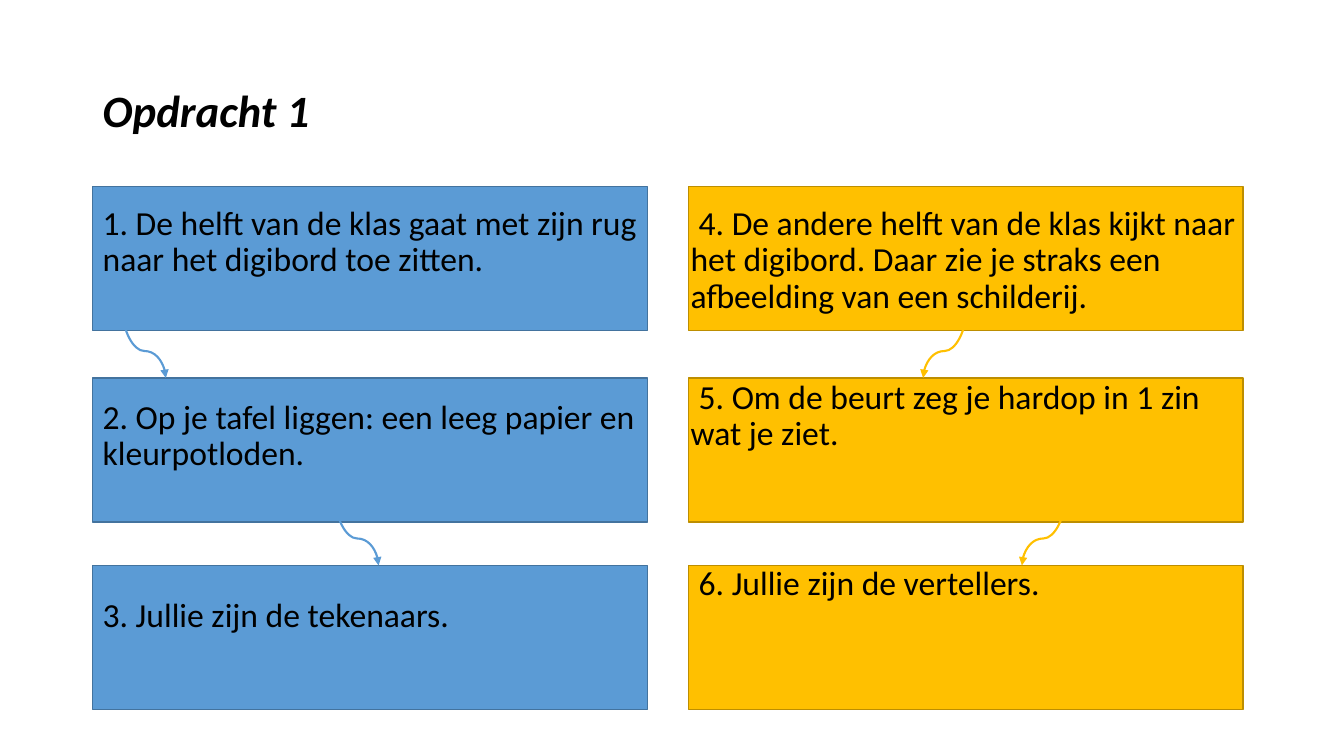
from lxml import etree
from pptx import Presentation
from pptx import util as u
from pptx.dml.color import RGBColor
from pptx.enum import shapes, text
from pptx.oxml import ns

COLOURS = {
    "ink": "000000",
    "drawers": "5B9BD5",
    "drawers_edge": "43739E",
    "tellers": "FFC000",
    "tellers_edge": "BD8E00",
}
FONT = "Calibri"
STEP_TOPS = [1.85, 3.75, 5.61]
STEP_WIDTH, STEP_HEIGHT = 5.5, 1.43
ARROW_DROP, ARROW_SHIFT = 0.68, 0.43

DRAWERS = [
    ("1. De helft van de klas gaat met zijn rug naar het digibord toe zitten.", 0.2),
    ("2. Op je tafel liggen: een leeg papier en kleurpotloden.", 0.22),
    ("3. Jullie zijn de tekenaars.", 0.33),
]
TELLERS = [
    ("4. De andere helft van de klas kijkt naar het digibord. "
     "Daar zie je straks een afbeelding van een schilderij.", 0.2),
    ("5. Om de beurt zeg je hardop in 1 zin wat je ziet.", 0.02),
    ("6. Jullie zijn de vertellers.", 0.01),
]


def colour(name):
    return RGBColor.from_string(COLOURS[name])


def write(holder, words, size=24, bold=False, italic=False, indent=0,
          anchor=text.MSO_ANCHOR.TOP, margins=(0.1, 0.05, 0.1, 0.05)):
    frame = holder.text_frame
    frame.word_wrap = True
    frame.vertical_anchor = anchor
    (frame.margin_left, frame.margin_top,
     frame.margin_right, frame.margin_bottom) = map(u.Inches, margins)
    paragraph = frame.paragraphs[0]
    paragraph.alignment = text.PP_ALIGN.LEFT
    paragraph.line_spacing = 0.9
    if indent:
        paragraph._p.get_or_add_pPr().set("indent", str(u.Inches(indent)))
    run = paragraph.add_run()
    run.text = words
    run.font.name = FONT
    run.font.size = u.Pt(size)
    run.font.bold = bold
    run.font.italic = italic
    run.font.color.rgb = colour("ink")


def add_title(slide, left, top, width, height):
    title = slide.shapes.add_textbox(*map(u.Inches, (left, top, width, height)))
    write(title, "Opdracht 1", size=32, bold=True, italic=True,
          anchor=text.MSO_ANCHOR.MIDDLE)


def add_step(slide, left, top, words, group, margins, indent):
    step = slide.shapes.add_shape(
        shapes.MSO_SHAPE.RECTANGLE,
        *map(u.Inches, (left, top, STEP_WIDTH, STEP_HEIGHT)))
    step.shadow.inherit = False
    step.fill.solid()
    step.fill.fore_color.rgb = colour(group)
    step.line.color.rgb = colour(group + "_edge")
    step.line.width = u.Pt(1)
    write(step, words, margins=margins, indent=indent)


def add_arrow(slide, middle, tip, group, rightward):
    centre = tip - ARROW_DROP / 2
    start, end = middle - ARROW_DROP / 2, middle + ARROW_DROP / 2
    if rightward:
        start, end = end, start
    arrow = slide.shapes.add_connector(
        shapes.MSO_CONNECTOR.CURVE,
        u.Inches(start), u.Inches(centre - ARROW_SHIFT / 2),
        u.Inches(end), u.Inches(centre + ARROW_SHIFT / 2))
    arrow.line.color.rgb = colour(group)
    arrow.line.width = u.Pt(1.5)
    properties = arrow._element.spPr
    turn = 270 if rightward else 90
    properties.find(ns.qn("a:xfrm")).set("rot", str(turn * 60000))
    guides = properties.find(ns.qn("a:prstGeom")).get_or_add_avLst()
    etree.SubElement(guides, ns.qn("a:gd"), name="adj1", fmla="val 60600")
    etree.SubElement(arrow.line._get_or_add_ln(), ns.qn("a:tailEnd"), type="triangle")
    etree.SubElement(properties, ns.qn("a:effectLst"))


def add_column(slide, left, steps, group, arrow_offsets, rightward,
               side_margin, indent=0):
    for top, (words, text_top) in zip(STEP_TOPS, steps):
        margins = (side_margin, text_top, 0.02, 0)
        add_step(slide, left, top, words, group, margins, indent)
    for offset, tip in zip(arrow_offsets, STEP_TOPS[1:]):
        add_arrow(slide, left + offset, tip, group, rightward)


def main():
    deck = Presentation()
    deck.slide_width, deck.slide_height = u.Inches(13.33), u.Inches(7.5)
    slide = deck.slides.add_slide(deck.slide_layouts[6])
    add_title(slide, 0.92, 0.4, 11.5, 1.45)
    add_column(slide, 0.92, DRAWERS, "drawers", (0.51, 2.62), True, 0.1)
    add_column(slide, 6.83, TELLERS, "tellers", (2.54, 3.52), False, 0.02, indent=0.08)
    deck.save("out.pptx")


if __name__ == "__main__":
    main()
